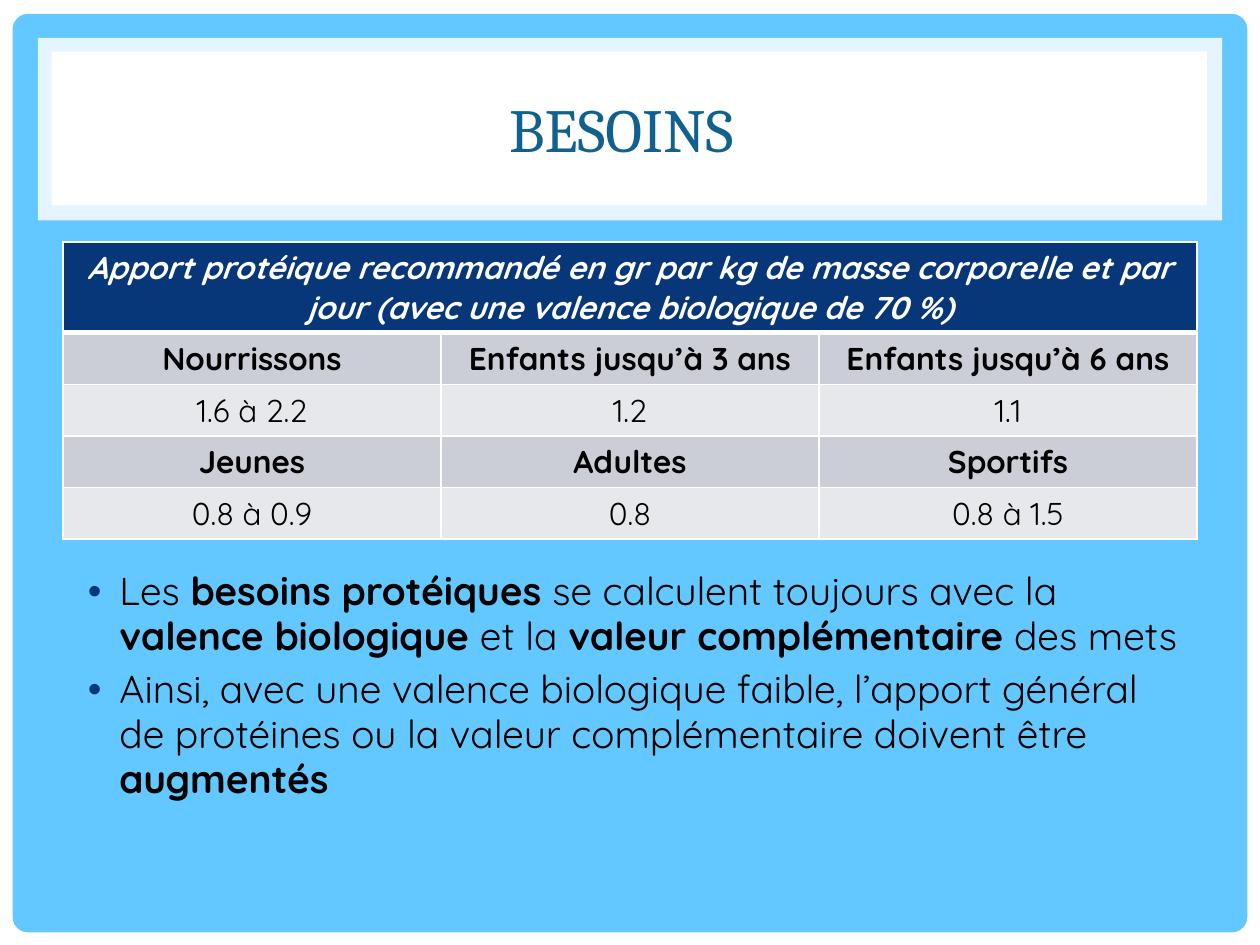
from dataclasses import dataclass

from lxml import etree
from pptx import Presentation
from pptx.dml.color import RGBColor
from pptx.enum.shapes import MSO_SHAPE
from pptx.enum.text import MSO_ANCHOR, PP_ALIGN
from pptx.oxml.ns import qn
from pptx.util import Inches, Pt

RECT = MSO_SHAPE.RECTANGLE
ROUNDED = MSO_SHAPE.ROUNDED_RECTANGLE
MIDDLE = MSO_ANCHOR.MIDDLE
CENTER = PP_ALIGN.CENTER


@dataclass(frozen=True)
class Theme:
    white: str = "FFFFFF"
    sky: str = "63C8FF"
    title: str = "11618F"
    navy: str = "073779"
    label_row: str = "CCCED7"
    value_row: str = "E7E8EC"
    text: str = "000000"
    heading_font: str = "Cambria"
    body_font: str = "Quicksand"
    title_size: float = 35
    table_size: float = 18
    body_size: float = 22.2


@dataclass(frozen=True)
class Panel:
    left: float
    top: float
    width: float
    height: float
    color: str
    kind: int = RECT
    radius: float = 0
    alpha: int = 100


@dataclass(frozen=True)
class Span:
    text: str
    bold: bool = False


T = Theme()

PANELS = (
    Panel(0, 0, 10, 7.5, T.white),
    Panel(0.1, 0.11, 9.8, 7.29, T.sky, ROUNDED, radius=0.017),
    Panel(0.3, 0.3, 9.4, 1.45, T.white, alpha=83),
    Panel(0.41, 0.41, 9.17, 1.22, T.white),
)

TABLE_TITLE = (
    "Apport protéique recommandé en gr par kg de masse corporelle "
    "et par jour (avec une valence biologique de 70 %)"
)
INTAKES = (
    ("Nourrissons", "Enfants jusqu’à 3 ans", "Enfants jusqu’à 6 ans"),
    ("1.6 à 2.2", "1.2", "1.1"),
    ("Jeunes", "Adultes", "Sportifs"),
    ("0.8 à 0.9", "0.8", "0.8 à 1.5"),
)
BULLETS = (
    (
        Span("Les "),
        Span("besoins protéiques ", True),
        Span("se calculent toujours avec la "),
        Span("valence biologique ", True),
        Span("et la "),
        Span("valeur complémentaire ", True),
        Span("des mets"),
    ),
    (
        Span(
            "Ainsi, avec une valence biologique faible, l’apport général "
            "de protéines ou la valeur complémentaire doivent être "
        ),
        Span("augmentés", True),
    ),
)


def add_panel(s, panel: Panel) -> None:
    """Draw one plain background panel."""
    sp = s.shapes.add_shape(
        panel.kind, Inches(panel.left), Inches(panel.top),
        Inches(panel.width), Inches(panel.height),
    )
    sp.shadow.inherit = False
    sp.line.fill.background()
    sp.fill.solid()
    sp.fill.fore_color.rgb = RGBColor.from_string(panel.color)
    if panel.radius:
        sp.adjustments[0] = panel.radius
    if panel.alpha < 100:
        color = sp._element.spPr.find(f".//{qn('a:srgbClr')}")
        etree.SubElement(color, qn("a:alpha"), val=str(panel.alpha * 1000))


def add_run(p, text: str, size: float, color: str, font: str = T.body_font,
            bold: bool = False, italic: bool = False) -> None:
    """Append a formatted run to a paragraph."""
    r = p.add_run()
    r.text = text
    r.font.name = font
    r.font.size = Pt(size)
    r.font.bold = bold
    r.font.italic = italic
    r.font.color.rgb = RGBColor.from_string(color)


def add_text_frame(s, left: float, top: float, width: float, height: float):
    """Add a wrapping text box and return its text frame."""
    sp = s.shapes.add_textbox(Inches(left), Inches(top), Inches(width), Inches(height))
    tf = sp.text_frame
    tf.word_wrap = True
    return tf


def fill_cell(cell, text: str, fill: str, color: str, bold: bool,
              italic: bool = False, bottom: float = 1) -> None:
    """Write a centred table cell with white borders."""
    tc_pr = cell._tc.get_or_add_tcPr()
    for side, width in (("L", 1), ("R", 1), ("T", 1), ("B", bottom)):
        ln = etree.SubElement(tc_pr, qn(f"a:ln{side}"), w=str(Pt(width)))
        solid = etree.SubElement(ln, qn("a:solidFill"))
        etree.SubElement(solid, qn("a:srgbClr"), val=T.white)
    cell.fill.solid()
    cell.fill.fore_color.rgb = RGBColor.from_string(fill)
    p = cell.text_frame.paragraphs[0]
    p.alignment = CENTER
    add_run(p, text, T.table_size, color, bold=bold, italic=italic)


def add_intake_table(s) -> None:
    """Build the recommended intake table."""
    rows, cols = len(INTAKES) + 1, len(INTAKES[0])
    table = s.shapes.add_table(
        rows, cols, Inches(0.5), Inches(1.92), Inches(9), Inches(2.36)
    ).table
    for i, row in enumerate(table.rows):
        row.height = Inches(0.41 if i else 0.72)
    table.cell(0, 0).merge(table.cell(0, cols - 1))
    fill_cell(table.cell(0, 0), TABLE_TITLE, T.navy, T.white, True, italic=True, bottom=3)
    for i, values in enumerate(INTAKES):
        is_label = i % 2 == 0
        fill = T.label_row if is_label else T.value_row
        for j, value in enumerate(values):
            fill_cell(table.cell(i + 1, j), value, fill, T.text, is_label)


def add_bullet(p, spans: tuple[Span, ...]) -> None:
    """Fill a paragraph as a bulleted item."""
    p.space_before = Pt(4)
    p.line_spacing = 0.97
    p_pr = p._p.get_or_add_pPr()
    p_pr.set("marL", str(Inches(0.38)))
    p_pr.set("indent", str(Inches(-0.25)))
    bu_clr = etree.SubElement(p_pr, qn("a:buClr"))
    etree.SubElement(bu_clr, qn("a:srgbClr"), val=T.navy)
    etree.SubElement(p_pr, qn("a:buFont"), typeface="Arial")
    etree.SubElement(p_pr, qn("a:buChar"), char="•")
    for span in spans:
        add_run(p, span.text, T.body_size, T.text, bold=span.bold)


def main() -> None:
    """Build and save the slide."""
    prs = Presentation()
    prs.slide_width, prs.slide_height = Inches(10), Inches(7.5)
    s = prs.slides.add_slide(prs.slide_layouts[6])
    s.background.fill.solid()
    s.background.fill.fore_color.rgb = RGBColor.from_string(T.sky)
    for panel in PANELS:
        add_panel(s, panel)
    tf = add_text_frame(s, 0.47, 0.45, 9.03, 1.14)
    tf.vertical_anchor = MIDDLE
    p = tf.paragraphs[0]
    p.alignment = CENTER
    add_run(p, "BESOINS ", T.title_size, T.title, T.heading_font)
    add_intake_table(s)
    tf = add_text_frame(s, 0.47, 4.47, 9.03, 2.23)
    for i, spans in enumerate(BULLETS):
        add_bullet(tf.add_paragraph() if i else tf.paragraphs[0], spans)
    prs.save("out.pptx")


if __name__ == "__main__":
    main()
